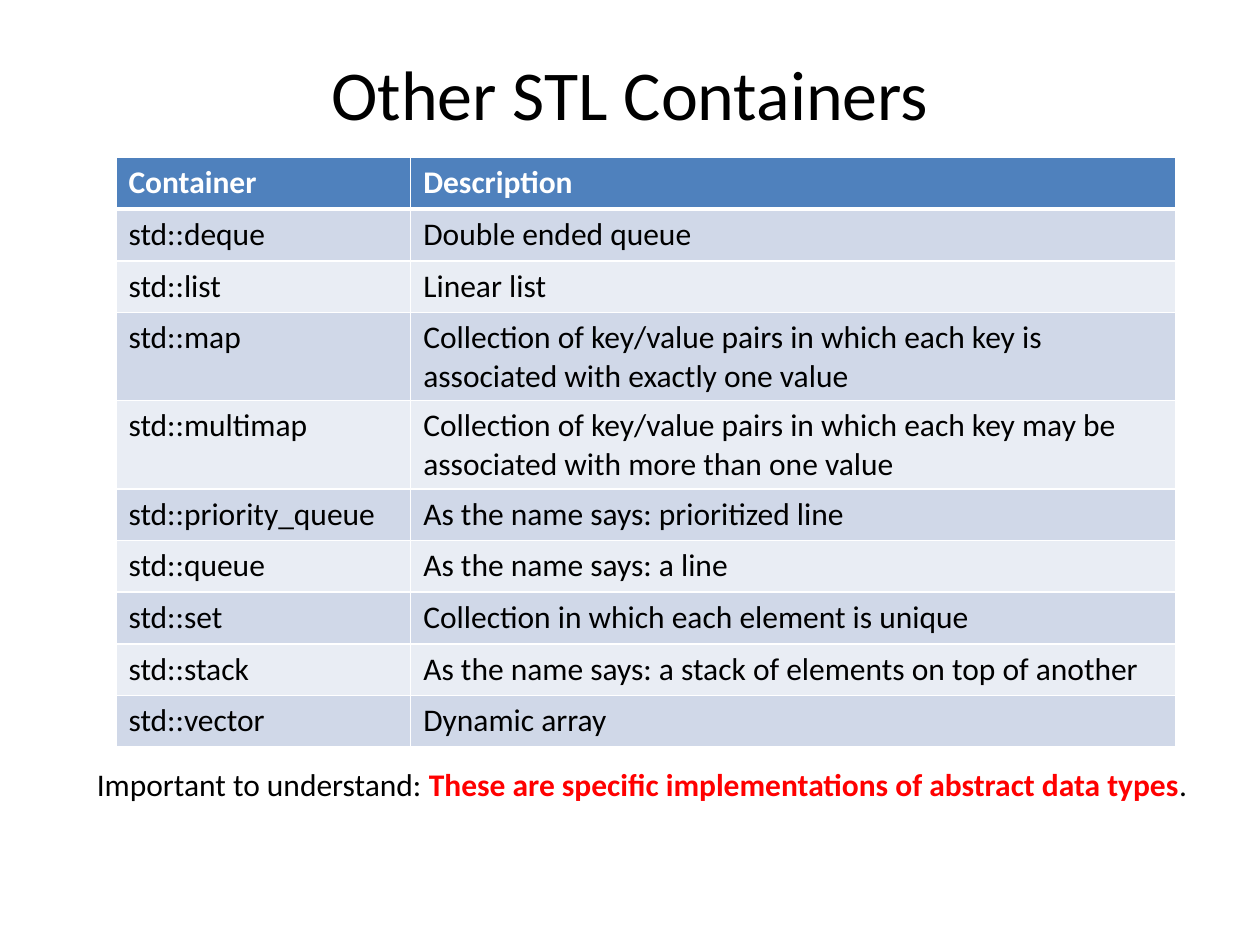
from typing import NamedTuple

import pptx
import pptx.dml.color
import pptx.enum.text
import pptx.oxml
import pptx.oxml.ns
import pptx.util
from pptx.util import Inches

FONT = "Calibri"
BLACK, WHITE, RED = "000000", "FFFFFF", "FF0000"
HEADER_FILL = "4F81BD"
BAND_FILLS = ("D0D8E8", "E9EDF4")


class Container(NamedTuple):
    name: str
    description: str


class Span(NamedTuple):
    text: str
    color: str = BLACK
    bold: bool = False


CONTAINERS = [
    Container("std::deque", "Double ended queue"),
    Container("std::list", "Linear list"),
    Container("std::map", "Collection of key/value pairs in which each key is "
              "associated with exactly one value"),
    Container("std::multimap", "Collection of key/value pairs in which each key may be "
              "associated with more than one value"),
    Container("std::priority_queue", "As the name says: prioritized line"),
    Container("std::queue", "As the name says: a line"),
    Container("std::set", "Collection in which each element is unique"),
    Container("std::stack", "As the name says: a stack of elements on top of another"),
    Container("std::vector", "Dynamic array"),
]


def rgb(color: str) -> pptx.dml.color.RGBColor:
    return pptx.dml.color.RGBColor.from_string(color)


def set_font(font, size: float, color: str, bold: bool = False) -> None:
    font.name, font.size, font.bold = FONT, pptx.util.Pt(size), bold
    font.color.rgb = rgb(color)


def set_borders(cell, top: float, bottom: float) -> None:
    """Draw white cell borders; widths are in points."""
    tc_pr = cell._tc.get_or_add_tcPr()
    for i, (side, width) in enumerate((("L", 1), ("R", 1), ("T", top), ("B", bottom))):
        tc_pr.insert(i, pptx.oxml.parse_xml(
            f'<a:ln{side} {pptx.oxml.ns.nsdecls("a")} w="{pptx.util.Pt(width)}">'
            f'<a:solidFill><a:srgbClr val="{WHITE}"/></a:solidFill></a:ln{side}>'))


def add_title(s, text: str) -> None:
    sp = s.shapes.add_textbox(Inches(0.5), Inches(0.3), Inches(9), Inches(0.87))
    tf = sp.text_frame
    tf.word_wrap = True
    tf.vertical_anchor = pptx.enum.text.MSO_ANCHOR.MIDDLE
    p = tf.paragraphs[0]
    p.text = text
    p.alignment = pptx.enum.text.PP_ALIGN.CENTER
    set_font(p.font, 40, BLACK)


def add_container_table(s, containers: list[Container]) -> None:
    rows = [Container("Container", "Description"), *containers]
    row_height = Inches(0.41)
    table = s.shapes.add_table(len(rows), 2, Inches(0.92), Inches(1.25),
                               Inches(8.41), row_height * len(rows)).table
    for column, width in zip(table.columns, (2.34, 6.07)):
        column.width = Inches(width)
    for i, row in enumerate(rows):
        table.rows[i].height = row_height
        header = i == 0
        for j, text in enumerate(row):
            cell = table.cell(i, j)
            cell.fill.solid()
            cell.fill.fore_color.rgb = rgb(HEADER_FILL if header else BAND_FILLS[(i - 1) % 2])
            set_borders(cell, top=3 if i == 1 else 1, bottom=3 if header else 1)
            p = cell.text_frame.paragraphs[0]
            p.text = text
            set_font(p.font, 18, WHITE if header else BLACK, bold=header)


def add_note(s, spans: list[Span]) -> None:
    sp = s.shapes.add_textbox(Inches(0.67), Inches(6.02), Inches(8.93), Inches(0.4))
    tf = sp.text_frame
    tf.word_wrap = False
    tf.auto_size = pptx.enum.text.MSO_AUTO_SIZE.SHAPE_TO_FIT_TEXT
    p = tf.paragraphs[0]
    for span in spans:
        r = p.add_run()
        r.text = span.text
        set_font(r.font, 18, span.color, span.bold)


def main() -> None:
    prs = pptx.Presentation()
    prs.slide_width, prs.slide_height = Inches(10), Inches(7.5)
    s = prs.slides.add_slide(prs.slide_layouts[6])

    # Title
    add_title(s, "Other STL Containers")

    # Container overview
    add_container_table(s, CONTAINERS)

    # Closing remark
    add_note(s, [
        Span("Important to understand: "),
        Span("These are specific implementations of abstract data types", RED, True),
        Span("."),
    ])

    prs.save("out.pptx")


if __name__ == "__main__":
    main()
